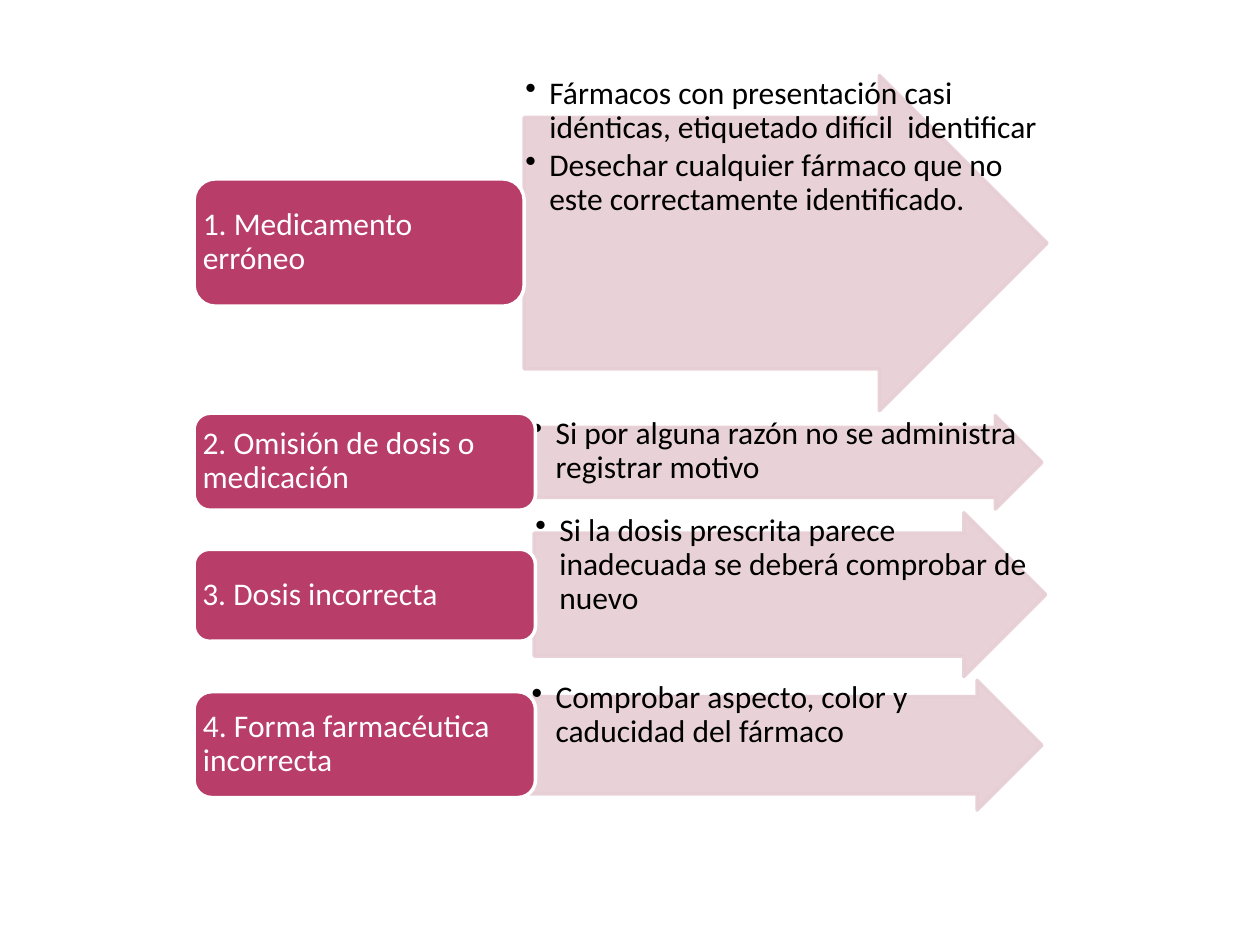
from dataclasses import dataclass

from lxml.etree import SubElement
from pptx import Presentation
from pptx.dml.color import RGBColor
from pptx.enum.shapes import MSO_SHAPE
from pptx.enum.text import MSO_ANCHOR, PP_ALIGN
from pptx.oxml.ns import qn
from pptx.util import Inches, Pt


@dataclass(frozen=True)
class Theme:
    font: str = "Calibri"
    size: Pt = Pt(18)
    gap: Pt = Pt(2.7)
    line: Pt = Pt(2)
    dark: RGBColor = RGBColor(0xB8, 0x3D, 0x68)
    pale: RGBColor = RGBColor(0xE6, 0xCE, 0xD4)
    white: RGBColor = RGBColor(0xFF, 0xFF, 0xFF)
    black: RGBColor = RGBColor(0, 0, 0)


THEME = Theme()
LEFT = 1.54

# Label, label top, width and height, arrow place, notes
ERRORS = [
    ("1. Medicamento erróneo", (1.42, 2.62, 1.01), (4.16, 0.6, 4.15, 2.66),
     ["Fármacos con presentación casi idénticas, etiquetado difícil  identificar",
      "Desechar cualquier fármaco que no este correctamente identificado."]),
    ("2. Omisión de dosis o medicación", (3.28, 2.71, 0.77), (4.21, 3.3, 4.06, 0.74),
     ["Si por alguna razón no se administra registrar motivo"]),
    ("3. Dosis incorrecta", (4.36, 2.71, 0.73), (4.24, 4.07, 4.06, 1.3),
     ["Si la dosis prescrita parece inadecuada se deberá comprobar de nuevo"]),
    ("4. Forma farmacéutica incorrecta", (5.49, 2.71, 0.84), (4.21, 5.4, 4.06, 1.03),
     ["Comprobar aspecto, color y caducidad del fármaco"]),
]


def add_block(slide, kind, place, fill, line):
    block = slide.shapes.add_shape(kind, *map(Inches, place))
    block.shadow.inherit = False
    block.fill.solid()
    block.fill.fore_color.rgb = fill
    block.line.color.rgb = line
    block.line.width = THEME.line
    return block


def fade(block, share):
    """Make fill and line opaque only to the given share."""
    for color in block._element.spPr.iter(qn("a:srgbClr")):
        SubElement(color, qn("a:alpha"), val=str(int(share * 100000)))


def set_frame(frame, side, edge, anchor):
    frame.word_wrap = True
    frame.margin_left = frame.margin_right = Inches(side)
    frame.margin_top = frame.margin_bottom = Inches(edge)
    frame.vertical_anchor = anchor


def set_style(para, color):
    para.alignment = PP_ALIGN.LEFT
    para.line_spacing = 0.9
    para.font.name = THEME.font
    para.font.size = THEME.size
    para.font.color.rgb = color


def add_bullet(para):
    props = para._p.get_or_add_pPr()
    props.set("marL", str(Inches(0.19)))
    props.set("indent", str(-Inches(0.19)))
    SubElement(props, qn("a:buChar"), char="•")


def add_arrow(slide, place):
    arrow = add_block(slide, MSO_SHAPE.RIGHT_ARROW, place, THEME.pale, THEME.pale)
    arrow.adjustments[0] = 0.75
    arrow.adjustments[1] = 0.5
    fade(arrow, 0.9)


def add_notes(slide, place, notes):
    frame = slide.shapes.add_textbox(*map(Inches, place)).text_frame
    set_frame(frame, 0.01, 0.01, MSO_ANCHOR.TOP)
    frame.text = "\n".join(notes)
    for para in frame.paragraphs:
        add_bullet(para)
        set_style(para, THEME.black)
        para.space_after = THEME.gap


def add_label(slide, text, top, width, height):
    label = add_block(slide, MSO_SHAPE.ROUNDED_RECTANGLE,
                      (LEFT, top, width, height), THEME.dark, THEME.white)
    # Rounded corners already push the text in by about 5% of the height
    inset = round(0.07 - 0.05 * height, 2)
    set_frame(label.text_frame, inset, 0, MSO_ANCHOR.MIDDLE)
    label.text_frame.text = text
    set_style(label.text_frame.paragraphs[0], THEME.white)


def main():
    deck = Presentation()
    deck.slide_width, deck.slide_height = Inches(10), Inches(7.5)
    slide = deck.slides.add_slide(deck.slide_layouts[6])
    for title, box, place, notes in ERRORS:
        add_arrow(slide, place)
        add_notes(slide, place, notes)
        add_label(slide, title, *box)
    deck.save("out.pptx")


if __name__ == "__main__":
    main()
